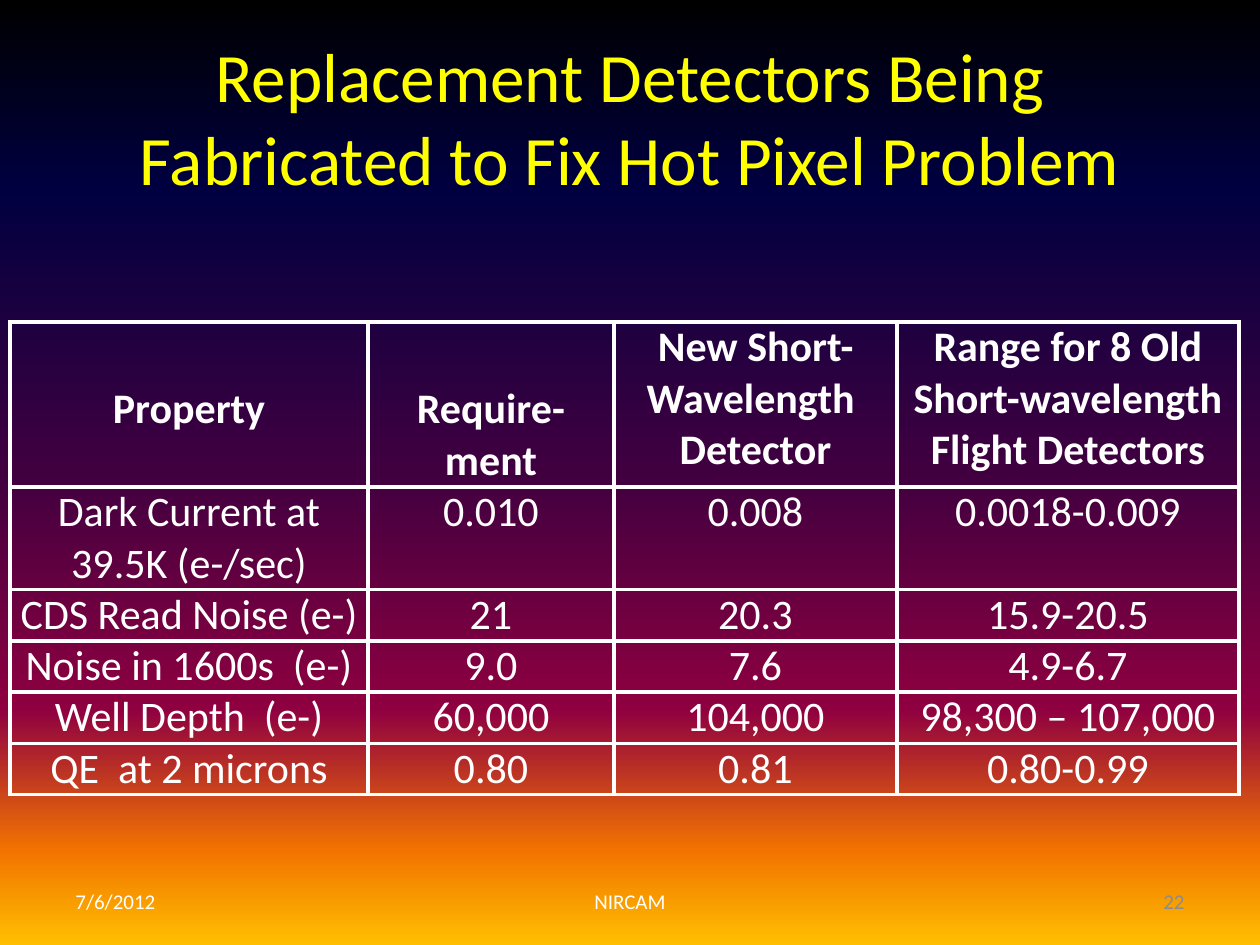
from lxml.etree import SubElement
from pptx import Presentation
from pptx.dml.color import RGBColor
from pptx.enum.text import MSO_ANCHOR as Anchor, MSO_AUTO_SIZE as AutoSize, PP_ALIGN as Align
from pptx.oxml.ns import qn
from pptx.util import Emu, Pt

PX = 914400 // 126
FONT = "Calibri"
WHITE = RGBColor(0xFF, 0xFF, 0xFF)
YELLOW = RGBColor(0xFF, 0xFF, 0x00)
GRAY = RGBColor(0x8C, 0x8C, 0x8C)
SUNSET = [
    (0, RGBColor(0x00, 0x00, 0x00)),
    (20, RGBColor(0x00, 0x00, 0x40)),
    (50, RGBColor(0x40, 0x00, 0x40)),
    (75, RGBColor(0x8F, 0x00, 0x40)),
    (90, RGBColor(0xF2, 0x73, 0x00)),
    (100, RGBColor(0xFF, 0xBF, 0x00)),
]

DETECTOR_ROWS = [
    ["Property", "Require-ment", "New Short-Wavelength  Detector",
     "Range for 8 Old Short-wavelength Flight Detectors"],
    ["Dark Current at 39.5K (e-/sec)", "0.010", "0.008", "0.0018-0.009"],
    ["CDS Read Noise (e-)", "21", "20.3", "15.9-20.5"],
    ["Noise in 1600s  (e-)", "9.0", "7.6", "4.9-6.7"],
    ["Well Depth  (e-)", "60,000", "104,000", "98,300 – 107,000"],
    ["QE  at 2 microns", "0.80", "0.81", "0.80-0.99"],
]
COLUMN_WIDTHS = [358, 246, 283, 342]
ROW_HEIGHTS = [165, 102, 51, 51, 51, 51]
HEADER_DROP = 62  # lowers the two short headings by one line


def px(length):
    return Emu(length * PX)


class SlideBuilder:
    def __init__(self, slide):
        self.slide = slide

    def background(self, stops):
        """Fill the slide from top to bottom with (percent, colour) stops."""
        fill = self.slide.background.fill
        fill.gradient()
        fill.gradient_angle = 270
        stop_list = next(self.slide.element.iter(qn("a:gsLst")))
        stop_list.clear()
        for percent, color in stops:
            stop = SubElement(stop_list, qn("a:gs"), pos=str(percent * 1000))
            SubElement(stop, qn("a:srgbClr"), val=str(color))

    def set_text(self, frame, text, size, color, align, bold=False):
        frame.text = text
        frame.word_wrap = True
        for paragraph in frame.paragraphs:
            paragraph.alignment = align
            for run in paragraph.runs:
                run.font.name = FONT
                run.font.size = Pt(size)
                run.font.bold = bold
                run.font.color.rgb = color

    def title(self, text, left, top, width, height):
        title = self.slide.shapes.title
        title.left, title.top, title.width, title.height = map(px, (left, top, width, height))
        self.set_text(title.text_frame, text, 39.6, YELLOW, Align.CENTER)
        title.text_frame.auto_size = AutoSize.NONE
        title.text_frame.vertical_anchor = Anchor.MIDDLE

    def footer(self, text, left, width, align, color=WHITE):
        box = self.slide.shapes.add_textbox(px(left), px(876), px(width), px(50))
        self.set_text(box.text_frame, text, 12, color, align)
        box.text_frame.vertical_anchor = Anchor.MIDDLE

    def border(self, cell):
        properties = cell._tc.get_or_add_tcPr()
        for position, side in enumerate(("a:lnL", "a:lnR", "a:lnT", "a:lnB")):
            line = SubElement(properties, qn(side), w=str(Pt(2.25)))
            properties.insert(position, line)
            solid = SubElement(line, qn("a:solidFill"))
            SubElement(solid, qn("a:srgbClr"), val=str(WHITE))

    def table(self, rows, left, top, widths, heights):
        table = self.slide.shapes.add_table(
            len(rows), len(widths), px(left), px(top), px(sum(widths)), px(sum(heights))
        ).table
        table.horz_banding = False
        for column, width in zip(table.columns, widths):
            column.width = px(width)
        for row, height in zip(table.rows, heights):
            row.height = px(height)
        for r, texts in enumerate(rows):
            for c, text in enumerate(texts):
                cell = table.cell(r, c)
                cell.fill.background()
                cell.margin_left = cell.margin_right = px(9)
                cell.margin_top = px(HEADER_DROP if r == 0 and c < 2 else 0)
                cell.margin_bottom = 0
                self.set_text(cell.text_frame, text, 24, WHITE, Align.CENTER, bold=r == 0)
                self.border(cell)


def main():
    deck = Presentation()
    deck.slide_width, deck.slide_height = px(1260), px(945)
    title_only = deck.slide_layouts[5]
    builder = SlideBuilder(deck.slides.add_slide(title_only))
    builder.background(SUNSET)
    builder.title("Replacement Detectors Being Fabricated to Fix Hot Pixel Problem",
                  63, 38, 1134, 157)
    builder.table(DETECTOR_ROWS, 10, 322, COLUMN_WIDTHS, ROW_HEIGHTS)
    builder.footer("7/6/2012", 63, 294, Align.LEFT)
    builder.footer("22", 903, 294, Align.RIGHT, GRAY)
    builder.footer("NIRCAM", 430, 400, Align.CENTER)
    deck.save("out.pptx")


if __name__ == "__main__":
    main()
